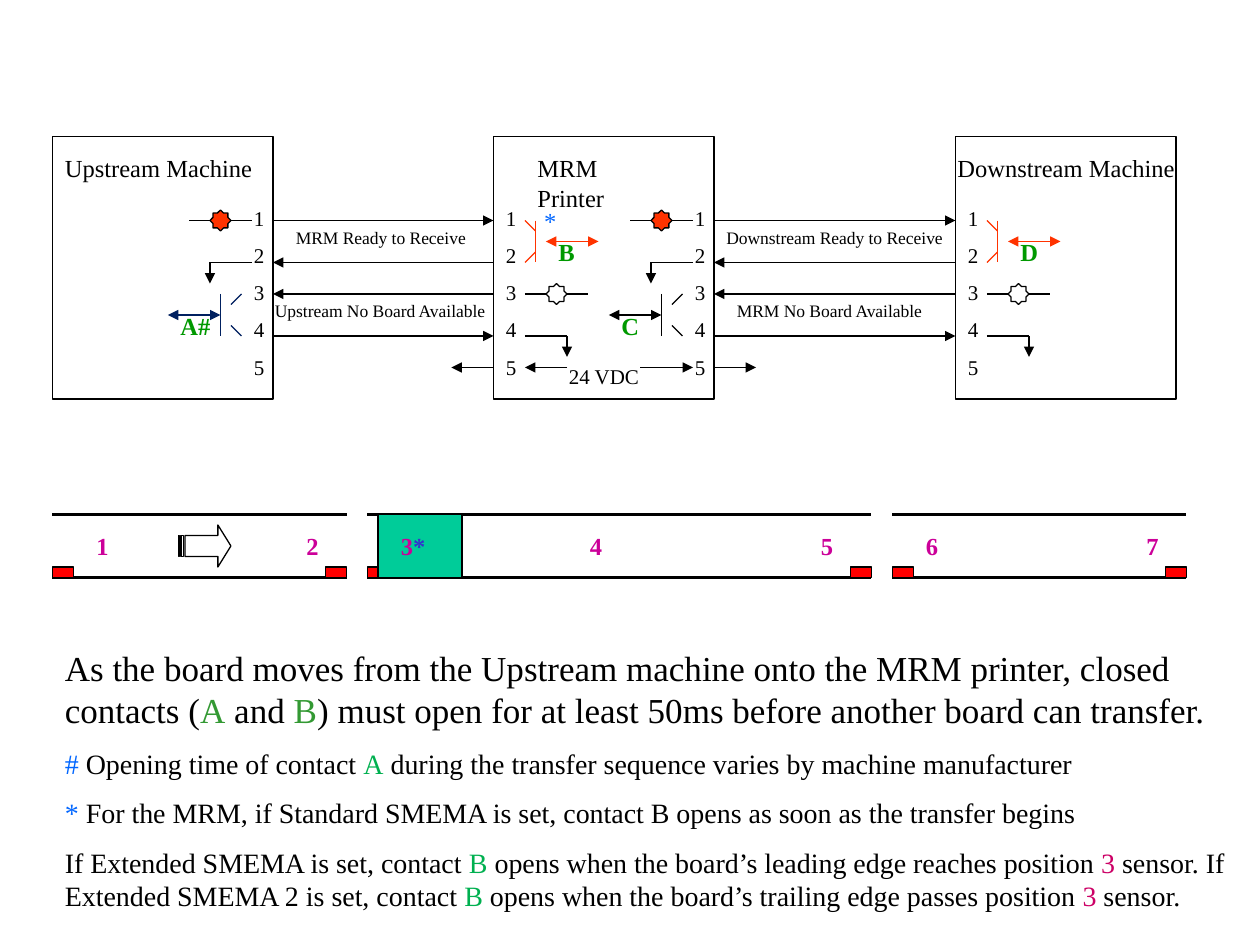
import dataclasses
import itertools
import typing

import lxml.etree
import pptx
import pptx.dml.color
import pptx.enum.shapes
import pptx.enum.text
import pptx.oxml.ns
import pptx.util

Pt = pptx.util.Pt
RGBColor = pptx.dml.color.RGBColor
SHAPES = pptx.enum.shapes.MSO_SHAPE
FONT = "Times New Roman"

BLACK = RGBColor(0x00, 0x00, 0x00)
ORANGE = RGBColor(0xFF, 0x33, 0x00)
NAVY = RGBColor(0x00, 0x20, 0x60)
RED = RGBColor(0xFF, 0x00, 0x00)
TEAL = RGBColor(0x00, 0xCC, 0x99)
LABEL_GREEN = RGBColor(0x00, 0x99, 0x00)
SOFT_GREEN = RGBColor(0x33, 0x99, 0x33)
NOTE_GREEN = RGBColor(0x00, 0xB0, 0x50)
BLUE = RGBColor(0x00, 0x66, 0xFF)
INDIGO = RGBColor(0x33, 0x33, 0xCC)
MAGENTA = RGBColor(0xCC, 0x00, 0x99)
PINK = RGBColor(0xCC, 0x00, 0x66)

Runs = list[tuple[str, RGBColor]]
Color = typing.Optional[RGBColor]


@dataclasses.dataclass
class Line:
    runs: Runs
    size: float = 14
    bold: bool = False
    space_before: float = 0


@dataclasses.dataclass
class Label:
    left: float
    top: float
    width: float
    text: str
    size: float = 14
    color: RGBColor = BLACK
    bold: bool = False


@dataclasses.dataclass
class Track:
    left: float
    width: float


presentation = pptx.Presentation()
presentation.slide_width = Pt(720)
presentation.slide_height = Pt(540)
slide = presentation.slides.add_slide(presentation.slide_layouts[6])


def set_format(target: typing.Any, values: dict[str, typing.Any]) -> None:
    for name, value in values.items():
        setattr(target, name, value)


def draw_shape(kind: typing.Any, left: float, top: float, width: float,
               height: float, fill: Color = None) -> typing.Any:
    shape = slide.shapes.add_shape(kind, Pt(left), Pt(top), Pt(width), Pt(height))
    shape.shadow.inherit = False
    if fill is None:
        shape.fill.background()
    else:
        shape.fill.solid()
        shape.fill.fore_color.rgb = fill
    shape.line.color.rgb = BLACK
    shape.line.width = Pt(0.75)
    return shape


def draw_line(x1: float, y1: float, x2: float, y2: float, color: RGBColor = BLACK,
              width: float = 0.75, arrows: tuple[str, ...] = ()) -> None:
    """Arrows lists the arrowed ends: headEnd (start) before tailEnd (finish)."""
    connector = slide.shapes.add_connector(
        pptx.enum.shapes.MSO_CONNECTOR.STRAIGHT, Pt(x1), Pt(y1), Pt(x2), Pt(y2))
    connector.line.color.rgb = color
    connector.line.width = Pt(width)
    properties = connector._element.spPr
    for end in arrows:
        lxml.etree.SubElement(connector.line._ln, pptx.oxml.ns.qn(f"a:{end}"),
                              type="triangle")
    lxml.etree.SubElement(properties, pptx.oxml.ns.qn("a:effectLst"))


FORWARD = ("tailEnd",)
BOTH = ("headEnd", "tailEnd")


def draw_text(left: float, top: float, width: float, height: float,
              lines: list[Line]) -> None:
    frame = slide.shapes.add_textbox(Pt(left), Pt(top), Pt(width), Pt(height)).text_frame
    set_format(frame, {"word_wrap": True,
                       "auto_size": pptx.enum.text.MSO_AUTO_SIZE.SHAPE_TO_FIT_TEXT})
    for index, line in enumerate(lines):
        paragraph = frame.add_paragraph() if index else frame.paragraphs[0]
        paragraph.space_before = Pt(line.space_before)
        for text, color in line.runs:
            run = paragraph.add_run()
            run.text = text
            set_format(run.font, {"name": FONT, "size": Pt(line.size), "bold": line.bold})
            run.font.color.rgb = color


def draw_label(label: Label) -> None:
    line = Line([(label.text, label.color)], label.size, label.bold)
    draw_text(label.left, label.top, label.width, label.size + 10, [line])


def draw_pins(left: float) -> None:
    draw_text(left, 114, 18, 108, [
        Line([(str(pin), BLACK)], 12, space_before=6.8 if pin > 1 else 0)
        for pin in range(1, 6)])


def draw_lamp(left: float, y: float, fill: Color = None) -> None:
    star = draw_shape(SHAPES.STAR_8_POINT, left, y - 6, 12, 12, fill)
    star.adjustments[0] = 0.383
    for start in (left - 12, left + 12):
        draw_line(start, y, start + 12, y)


def draw_contact(bar: float, top: float, tip: float, color: RGBColor,
                 arrow_start: float) -> None:
    """A bar with two slanted leads, whose outer ends lie at tip."""
    inner = tip - 6 if tip > bar else tip + 6
    draw_line(bar, top, bar, top + 24, color)
    draw_line(tip, top, inner, top + 6, color)
    draw_line(tip, top + 24, inner, top + 18, color)
    draw_line(arrow_start, top + 12, arrow_start + 30, top + 12, color, arrows=BOTH)


def draw_return(pin_x: float, corner_x: float, y: float) -> None:
    draw_line(pin_x, y, corner_x, y)
    draw_line(corner_x, y, corner_x, y + 12, arrows=FORWARD)


def draw_right_port(edge: float, color: RGBColor) -> None:
    draw_pins(edge - 18)
    draw_lamp(edge - 36, 126, ORANGE)
    draw_return(edge - 12, edge - 36, 150)
    draw_contact(edge - 30, 168, edge - 18, color, edge - 60)


def draw_left_port(edge: float) -> None:
    draw_pins(edge)
    draw_contact(edge + 24, 126, edge + 18, ORANGE, edge + 30)
    draw_lamp(edge + 30, 168)
    draw_return(edge + 18, edge + 42, 192)


# Machines and their ports
MACHINE_WIDTH = 126
UPSTREAM, PRINTER, DOWNSTREAM = 30, 282, 546
for machine_left in (UPSTREAM, PRINTER, DOWNSTREAM):
    draw_shape(SHAPES.RECTANGLE, machine_left, 78, MACHINE_WIDTH, 150)
draw_right_port(UPSTREAM + MACHINE_WIDTH, NAVY)
draw_right_port(PRINTER + MACHINE_WIDTH, BLACK)
draw_left_port(PRINTER)
draw_left_port(DOWNSTREAM)

# Signals between neighbouring machines
for sender, receiver in itertools.pairwise((UPSTREAM, PRINTER, DOWNSTREAM)):
    near = sender + MACHINE_WIDTH
    for y in (126, 192):
        draw_line(near, y, receiver, y, arrows=FORWARD)
    for y in (150, 168):
        draw_line(receiver, y, near, y, arrows=FORWARD)

# 24 VDC supply on pin 5
for start, finish in ((324, 300), (366, 396), (408, 432), (282, 258)):
    draw_line(start, 210, finish, 210, arrows=FORWARD)

# Conveyor tracks with a sensor at each end
TRACK_TOP, TRACK_BOTTOM = 294, 330
for track in (Track(30, 168), Track(210, 288), Track(510, 168)):
    right = track.left + track.width
    for y in (TRACK_TOP, TRACK_BOTTOM):
        draw_line(track.left, y, right, y, width=2)
    for sensor_left in (track.left, right - 12):
        draw_shape(SHAPES.RECTANGLE, sensor_left, TRACK_BOTTOM - 6, 12, 6, RED)

# Board and travel direction
draw_shape(SHAPES.RECTANGLE, 216, TRACK_TOP, 48, 36, TEAL)
direction = draw_shape(SHAPES.STRIPED_RIGHT_ARROW, 102, 300, 30, 24)
direction.adjustments[0] = 0.5
direction.adjustments[1] = 0.31

# Labels
for label in (
    Label(30, 84, 132, "Upstream Machine"),
    Label(300, 84, 90, "MRM Printer"),
    Label(540, 84, 150, "Downstream Machine"),
    Label(162, 126, 114, "MRM Ready to Receive", 10),
    Label(150, 168, 138, "Upstream No Board Available", 10),
    Label(408, 126, 144, "Downstream Ready to Receive", 10),
    Label(414, 168, 138, "MRM No Board Available", 10),
    Label(318, 204, 60, "24 VDC", 12),
    Label(96, 174, 36, "A#", color=LABEL_GREEN, bold=True),
    Label(312, 132, 24, "B", color=LABEL_GREEN, bold=True),
    Label(348, 174, 24, "C", color=LABEL_GREEN, bold=True),
    Label(576, 132, 30, "D", color=LABEL_GREEN, bold=True),
    Label(306, 114, 12, "*", color=BLUE),
):
    draw_label(label)

# Track positions
for position, left in ((1, 48), (2, 168), (4, 330), (5, 462), (6, 522), (7, 648)):
    draw_label(Label(left, 300, 30, str(position), color=MAGENTA, bold=True))
draw_text(222, 300, 30, 24, [Line([("3", MAGENTA), ("*", INDIGO)], bold=True)])

# Explanation
draw_text(30, 366, 678, 163, [
    Line([("As the board moves from the Upstream machine onto the MRM printer, "
           "closed contacts (", BLACK), ("A", SOFT_GREEN), (" and ", BLACK),
          ("B", SOFT_GREEN), (") must open for at least 50ms before another board "
                              "can transfer.", BLACK)], 20),
    Line([("# ", BLUE), ("Opening time of contact ", BLACK), ("A", NOTE_GREEN),
          (" during the transfer sequence varies by machine manufacturer", BLACK)],
         16, space_before=9),
    Line([("*", BLUE), (" For the MRM, if Standard SMEMA is set, contact B opens as "
                        "soon as the transfer begins", BLACK)], 16, space_before=9),
    Line([("If Extended SMEMA is set, contact ", BLACK), ("B", NOTE_GREEN),
          (" opens when the board’s leading edge reaches position ", BLACK),
          ("3", PINK), (" sensor. If Extended SMEMA 2 is set, contact ", BLACK),
          ("B", NOTE_GREEN),
          (" opens when the board’s trailing edge passes position ", BLACK),
          ("3", PINK), (" sensor.", BLACK)], 16, space_before=9),
])

presentation.save("out.pptx")
